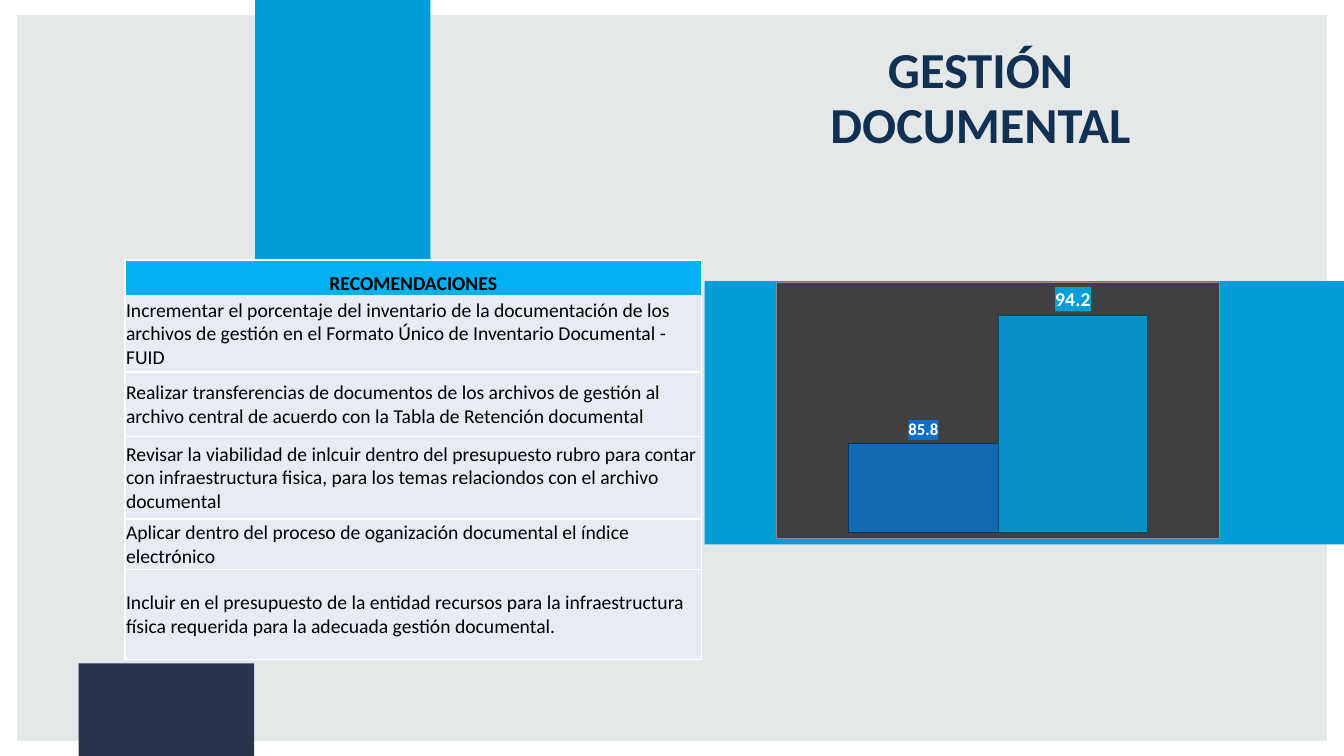
import pptx
import pptx.chart.data
import pptx.dml.color
import pptx.enum.chart
import pptx.enum.shapes
import pptx.enum.text
import pptx.oxml
import pptx.oxml.ns
import pptx.util
from pptx.util import Inches

FONT = "Calibri"
BLUE = "009DD9"
WHITE = "FFFFFF"
BLACK = "000000"
ROW_HEIGHTS = (0.35, 0.76, 0.64, 0.82, 0.5, 0.89)
HEADING = "RECOMENDACIONES"
RECOMMENDATIONS = (
    "Incrementar el porcentaje del inventario de la documentación de los archivos de gestión en el Formato Único de Inventario Documental - FUID",
    "Realizar transferencias de documentos de los archivos de gestión al archivo central de acuerdo con la Tabla de Retención documental",
    "Revisar la viabilidad de inlcuir dentro del presupuesto rubro para contar con infraestructura fisica, para los temas relaciondos con el archivo documental",
    "Aplicar dentro del proceso de oganización documental el índice electrónico",
    "Incluir en el presupuesto de la entidad recursos para la infraestructura física requerida para la adecuada gestión documental.",
)
SERIES = (
    ("Series 1", 85.8, "0F6FC6", "083763", 12),
    ("Series 2", 94.2, BLUE, "004E6C", 14),
)


def color(value):
    return pptx.dml.color.RGBColor.from_string(value)


def paint(fill, value):
    fill.solid()
    fill.fore_color.rgb = color(value)


def set_font(font, size, value, bold):
    font.name = FONT
    font.size = pptx.util.Pt(size)
    font.color.rgb = color(value)
    font.bold = bold


def xml(markup):
    tag, rest = markup.split(">", 1)
    return pptx.oxml.parse_xml(f"{tag} {pptx.oxml.ns.nsdecls('a', 'c')}>{rest}")


def add_panel(page, left, top, width, height, fill):
    panel = page.shapes.add_shape(
        pptx.enum.shapes.MSO_SHAPE.RECTANGLE,
        Inches(left), Inches(top), Inches(width), Inches(height),
    )
    panel.shadow.inherit = False
    paint(panel.fill, fill)
    panel.line.fill.background()


def add_title(page, text):
    box = page.shapes.add_textbox(Inches(7.18), Inches(0.21), Inches(5.09), Inches(1.37))
    frame = box.text_frame
    frame.word_wrap = True
    frame.vertical_anchor = pptx.enum.text.MSO_ANCHOR.BOTTOM
    para = frame.paragraphs[0]
    para.text = text
    para.alignment = pptx.enum.text.PP_ALIGN.CENTER
    para.line_spacing = 0.9
    set_font(para.font, 36, "113052", True)


def border_cell(cell):
    properties = cell._tc.get_or_add_tcPr()
    for index, side in enumerate(("lnL", "lnR", "lnT", "lnB")):
        properties.insert(index, xml(
            f'<a:{side} w="12700"><a:solidFill><a:srgbClr val="{WHITE}"/></a:solidFill></a:{side}>'
        ))


def fill_cell(cell, text, heading):
    anchors = pptx.enum.text.MSO_ANCHOR
    cell.margin_left = cell.margin_right = cell.margin_top = Inches(0.01)
    cell.margin_bottom = 0
    cell.vertical_anchor = anchors.BOTTOM if heading else anchors.MIDDLE
    paint(cell.fill, "00B0F0" if heading else "E7EBF5")
    border_cell(cell)
    para = cell.text_frame.paragraphs[0]
    para.text = text
    if heading:
        para.alignment = pptx.enum.text.PP_ALIGN.CENTER
    set_font(para.font, 14, BLACK, heading)


def add_recommendations(page):
    table = page.shapes.add_table(
        len(ROW_HEIGHTS), 1, Inches(1.24), Inches(2.58), Inches(5.72), Inches(sum(ROW_HEIGHTS))
    ).table
    for index, text in enumerate((HEADING, *RECOMMENDATIONS)):
        table.rows[index].height = Inches(ROW_HEIGHTS[index])
        fill_cell(table.cell(index, 0), text, index == 0)


def style_series(series, fill, line, label_size):
    paint(series.format.fill, fill)
    for shade in series.format.fill._xPr.iter(pptx.oxml.ns.qn("a:srgbClr")):
        shade.append(xml('<a:alpha val="88000"></a:alpha>'))
    series.format.line.color.rgb = color(line)
    series.format.line.width = pptx.util.Pt(0.75)
    labels = series.data_labels
    labels.show_value = True
    labels.number_format = "0.0"
    labels.number_format_is_linked = False
    labels.position = pptx.enum.chart.XL_LABEL_POSITION.OUTSIDE_END
    set_font(labels.font, label_size, WHITE, True)
    labels._element.find(pptx.oxml.ns.qn("c:txPr")).addprevious(xml(
        f'<c:spPr><a:solidFill><a:srgbClr val="{fill}"/></a:solidFill></c:spPr>'
    ))


def frame_chart(chart):
    space = chart._chartSpace
    space.find(pptx.oxml.ns.qn("c:chart")).addnext(xml(
        '<c:spPr><a:solidFill><a:srgbClr val="404040"/></a:solidFill>'
        '<a:ln w="6350"><a:solidFill><a:srgbClr val="8C8C8C"/></a:solidFill></a:ln></c:spPr>'
    ))
    area = next(space.iter(pptx.oxml.ns.qn("c:plotArea")))
    for layout in area.findall(pptx.oxml.ns.qn("c:layout")):
        area.remove(layout)
    area.insert(0, xml(
        '<c:layout><c:manualLayout><c:layoutTarget val="inner"/>'
        '<c:xMode val="edge"/><c:yMode val="edge"/><c:x val="0.02"/><c:y val="0.02"/>'
        '<c:w val="0.96"/><c:h val="0.96"/></c:manualLayout></c:layout>'
    ))


def add_score_chart(page):
    data = pptx.chart.data.CategoryChartData()
    data.categories = ["1"]
    for name, value, *_ in SERIES:
        data.add_series(name, [value])
    chart = page.shapes.add_chart(
        pptx.enum.chart.XL_CHART_TYPE.COLUMN_CLUSTERED,
        Inches(7.7), Inches(2.8), Inches(4.4), Inches(2.54), data,
    ).chart
    chart.has_title = False
    chart.has_legend = False
    set_font(chart.font, 10, BLACK, False)
    chart.category_axis.visible = False
    scale = chart.value_axis
    scale.visible = False
    scale.has_major_gridlines = False
    scale.minimum_scale = 80
    scale.maximum_scale = 96
    plot = chart.plots[0]
    plot.gap_width = 84
    plot.overlap = 0
    plot.vary_by_categories = False
    for series, (_, _, fill, line, label_size) in zip(plot.series, SERIES):
        style_series(series, fill, line, label_size)
    frame_chart(chart)


def main():
    deck = pptx.Presentation()
    deck.slide_width = Inches(13.33)
    deck.slide_height = Inches(7.5)
    page = deck.slides.add_slide(deck.slide_layouts[6])
    add_panel(page, 0.17, 0.15, 12.99, 7.2, "E4E8E9")
    add_panel(page, 2.53, 0, 1.74, 2.61, BLUE)
    add_panel(page, 6.99, 2.79, 6.34, 2.61, BLUE)
    add_panel(page, 0.78, 6.58, 1.74, 0.92, "26354D")
    add_title(page, "GESTIÓN DOCUMENTAL")
    add_recommendations(page)
    add_score_chart(page)
    deck.save("out.pptx")


if __name__ == "__main__":
    main()
